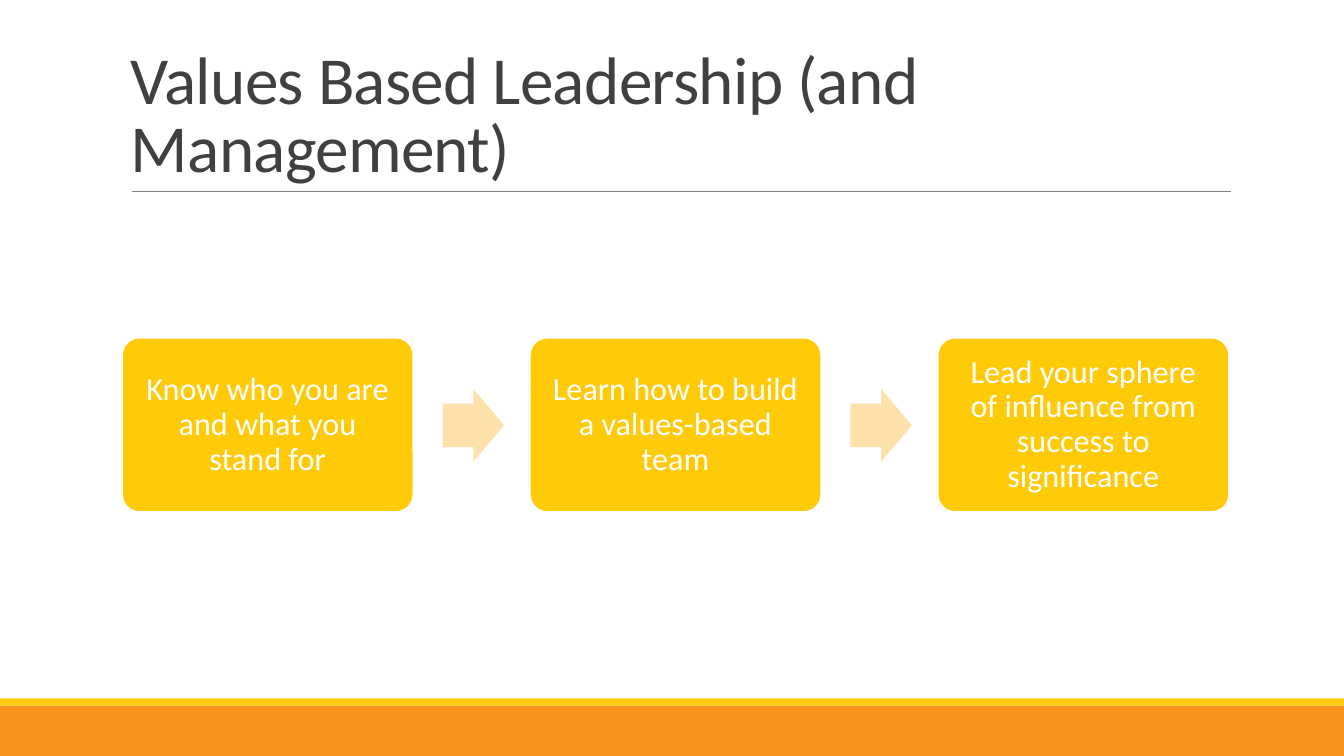
from pptx import Presentation
from pptx.dml.color import RGBColor
from pptx.enum import shapes, text
from pptx.oxml.ns import qn
from pptx.util import Inches, Pt

ORANGE = RGBColor(0xF8, 0x93, 0x1D)
YELLOW = RGBColor(0xFF, 0xCA, 0x08)
PALE_ORANGE = RGBColor(0xFF, 0xE1, 0xAB)
GRAY = RGBColor(0x80, 0x80, 0x80)
DARK_GRAY = RGBColor(0x40, 0x40, 0x40)
WHITE = RGBColor(0xFF, 0xFF, 0xFF)

STEPS = [
    "Know who you are and what you stand for",
    "Learn how to build a values-based team",
    "Lead your sphere of influence from success to significance",
]
STEP_LEFT = 1.21
STEP_PITCH = 4.045
ARROW_OFFSET = 3.18


def add_block(page, kind, left, top, width, height, fill, outline=None, adjustments=()):
    block = page.shapes.add_shape(
        kind, Inches(left), Inches(top), Inches(width), Inches(height))
    block.shadow.inherit = False
    block.fill.solid()
    block.fill.fore_color.rgb = fill
    if outline is None:
        block.line.fill.background()
    else:
        block.line.color.rgb = outline
        block.line.width = Pt(1.25)
    for index, value in enumerate(adjustments):
        block.adjustments[index] = value
    return block


def write_text(box, wording, *, size, color, align, anchor, line_spacing,
               margins=(0.1, 0.05), tracking=None):
    frame = box.text_frame
    frame.word_wrap = True
    frame.vertical_anchor = anchor
    frame.margin_left = frame.margin_right = Inches(margins[0])
    frame.margin_top = frame.margin_bottom = Inches(margins[1])
    para = frame.paragraphs[0]
    para.alignment = align
    para.line_spacing = line_spacing
    span = para.add_run()
    span.text = wording
    span.font.name = "Calibri"
    span.font.size = Pt(size)
    span.font.color.rgb = color
    if tracking is not None:
        span.font._element.set("spc", str(int(tracking * 100)))


def add_rule(page, left, right, top):
    rule = page.shapes.add_connector(
        shapes.MSO_CONNECTOR.STRAIGHT,
        Inches(left), Inches(top), Inches(right), Inches(top))
    rule.line.color.rgb = GRAY
    rule.line.width = Pt(0.5)
    properties = rule._element.spPr
    properties.append(properties.makeelement(qn("a:effectLst"), {}))


def add_title(page, wording):
    box = page.shapes.add_textbox(Inches(1.2), Inches(0.31), Inches(11), Inches(1.59))
    write_text(box, wording, size=48, color=DARK_GRAY, align=text.PP_ALIGN.LEFT,
               anchor=text.MSO_ANCHOR.BOTTOM, line_spacing=0.85, tracking=-0.5)


def add_step(page, left, wording):
    box = add_block(page, shapes.MSO_SHAPE.ROUNDED_RECTANGLE, left, 3.35, 2.89, 1.73,
                    YELLOW, outline=WHITE, adjustments=[0.1])
    write_text(box, wording, size=23, color=WHITE, align=text.PP_ALIGN.CENTER,
               anchor=text.MSO_ANCHOR.MIDDLE, line_spacing=0.9, margins=(0.135, 0.135))


def add_arrow(page, left):
    add_block(page, shapes.MSO_SHAPE.RIGHT_ARROW, left, 3.86, 0.61, 0.72,
              PALE_ORANGE, adjustments=[0.6, 0.5])


def main():
    deck = Presentation()
    deck.slide_width = Inches(13.33)
    deck.slide_height = Inches(7.5)
    page = deck.slides.add_slide(deck.slide_layouts[6])

    add_block(page, shapes.MSO_SHAPE.RECTANGLE, 0, 7, 13.33, 0.5, ORANGE)
    add_block(page, shapes.MSO_SHAPE.RECTANGLE, 0, 6.93, 13.33, 0.07, YELLOW)
    add_rule(page, 1.31, 12.21, 1.9)
    add_title(page, "Values Based Leadership (and Management)")

    for index, wording in enumerate(STEPS):
        left = STEP_LEFT + index * STEP_PITCH
        add_step(page, left, wording)
        if index < len(STEPS) - 1:
            add_arrow(page, left + ARROW_OFFSET)

    deck.save("out.pptx")


if __name__ == "__main__":
    main()
